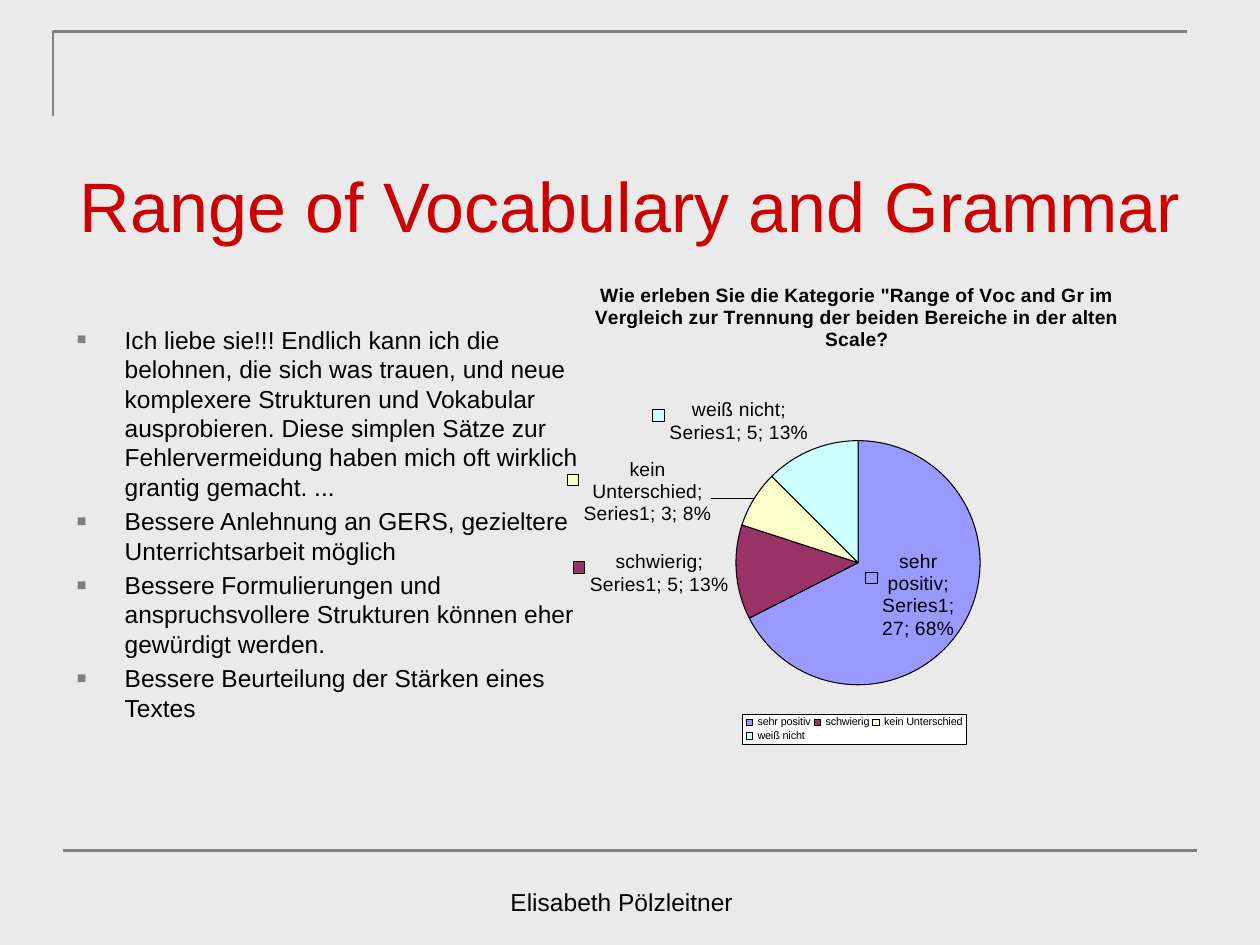
from lxml.etree import SubElement
from pptx import Presentation
from pptx.chart.data import CategoryChartData
from pptx.dml.color import RGBColor
from pptx.enum.chart import XL_CHART_TYPE as ChartType, XL_LABEL_POSITION as LabelPosition
from pptx.enum.chart import XL_LEGEND_POSITION as LegendPosition
from pptx.enum.shapes import MSO_CONNECTOR as Connector
from pptx.enum.text import MSO_ANCHOR as Anchor, MSO_AUTO_SIZE as AutoSize, PP_ALIGN as Align
from pptx.oxml import parse_xml
from pptx.oxml.ns import nsdecls, qn
from pptx.util import Inches, Pt

BLACK = RGBColor(0x00, 0x00, 0x00)
GRAY = RGBColor(0x80, 0x80, 0x80)
RED = RGBColor(0xCC, 0x00, 0x00)
PAPER = RGBColor(0xEA, 0xEA, 0xEA)
SLICES = [
    RGBColor(0x99, 0x99, 0xFF),
    RGBColor(0x99, 0x33, 0x66),
    RGBColor(0xFF, 0xFF, 0xCC),
    RGBColor(0xCC, 0xFF, 0xFF),
]
FONT = "Arial"
WIDTH, HEIGHT = 10, 7.5

QUESTION = (
    'Wie erleben Sie die Kategorie "Range of Voc and Gr im Vergleich '
    "zur Trennung der beiden Bereiche in der alten Scale?"
)
ANSWERS = {"sehr positiv": 27, "schwierig": 5, "kein Unterschied": 3, "weiß nicht": 5}
COMMENTS = [
    "Ich liebe sie!!! Endlich kann ich die belohnen, die sich was trauen, und neue "
    "komplexere Strukturen und Vokabular ausprobieren. Diese simplen Sätze zur "
    "Fehlervermeidung haben mich oft wirklich grantig gemacht. ...",
    "Bessere Anlehnung an GERS, gezieltere Unterrichtsarbeit möglich",
    "Bessere Formulierungen und anspruchsvollere Strukturen können eher gewürdigt werden.",
    "Bessere Beurteilung der Stärken eines Textes",
]


def style_font(font, size, color=BLACK, bold=False):
    font.name, font.size, font.bold = FONT, Pt(size), bold
    font.color.rgb = color


def write(para, text, align=Align.LEFT, **look):
    para.alignment = align
    span = para.add_run()
    span.text = text
    style_font(span.font, **look)


def add_bullet(para):
    props = para._p.get_or_add_pPr()
    props.set("marL", str(Inches(0.38)))
    props.set("indent", str(-Inches(0.38)))
    color = SubElement(props, qn("a:buClr"))
    SubElement(color, qn("a:srgbClr"), val=str(GRAY))
    SubElement(props, qn("a:buSzPct"), val="65000")
    SubElement(props, qn("a:buFont"), typeface=FONT)
    SubElement(props, qn("a:buChar"), char="■")


def place(parent, index, inner=False, **shares):
    for old in parent.findall(qn("c:layout")):
        parent.remove(old)
    layout = parse_xml(f"<c:layout {nsdecls('c')}><c:manualLayout/></c:layout>")
    manual = layout[0]
    if inner:
        SubElement(manual, qn("c:layoutTarget"), val="inner")
    if parent.tag != qn("c:dLbl"):
        for axis in "xy":
            SubElement(manual, qn(f"c:{axis}Mode"), val="edge")
    for key, share in shares.items():
        SubElement(manual, qn(f"c:{key}"), val=str(share))
    parent.insert(index, layout)


class SlideBuilder:
    def __init__(self, deck):
        self.page = deck.slides.add_slide(deck.slide_layouts[1])
        self.shapes = self.page.shapes
        self.width, self.height = deck.slide_width, deck.slide_height
        fill = self.page.background.fill
        fill.solid()
        fill.fore_color.rgb = PAPER

    def spot(self, x, y):
        return int(x * self.width), int(y * self.height)

    def move(self, box, x, y, w, h):
        box.left, box.top = self.spot(x, y)
        box.width, box.height = self.spot(w, h)

    def rule_style(self, line):
        line.color.rgb, line.width = GRAY, Pt(1.5)

    def corner(self, *points):
        first, *others = [self.spot(*point) for point in points]
        builder = self.shapes.build_freeform(*first)
        builder.add_line_segments(others, close=False)
        shape = builder.convert_to_shape()
        shape.shadow.inherit = False
        shape.fill.background()
        self.rule_style(shape.line)

    def rule(self, start, end):
        line = self.shapes.add_connector(Connector.STRAIGHT, *self.spot(*start), *self.spot(*end))
        SubElement(line._element.spPr, qn("a:effectLst"))
        self.rule_style(line.line)

    def frame(self, box, area, anchor):
        self.move(box, *area)
        frame = box.text_frame
        frame.word_wrap, frame.auto_size = True, AutoSize.NONE
        frame.vertical_anchor = anchor
        return frame

    def title(self, text, area):
        frame = self.frame(self.shapes.title, area, Anchor.MIDDLE)
        write(frame.paragraphs[0], text, Align.CENTER, size=40, color=RED)

    def footer(self, text, area):
        frame = self.frame(self.shapes.add_textbox(0, 0, 0, 0), area, Anchor.BOTTOM)
        write(frame.paragraphs[0], text, Align.CENTER, size=14)

    def bullets(self, items, area):
        frame = self.frame(self.page.placeholders[1], area, Anchor.TOP)
        for number, item in enumerate(items):
            para = frame.add_paragraph() if number else frame.paragraphs[0]
            para.space_before = Pt(2.8 if number else 0)
            add_bullet(para)
            write(para, item, size=14)

    def pie(self, heading, answers, area):
        data = CategoryChartData()
        data.categories = list(answers)
        data.add_series("Series1", list(answers.values()))
        corner, size = self.spot(*area[:2]), self.spot(*area[2:])
        chart = self.shapes.add_chart(ChartType.PIE, *corner, *size, data).chart
        style_font(chart.font, 6.8)
        chart.has_title = True
        title = chart.chart_title
        write(title.text_frame.paragraphs[0], heading, Align.CENTER, size=11, bold=True)
        place(title._element, 1, x=0.13, y=0.17)
        plot_area = chart._chartSpace.chart.plotArea
        place(plot_area, 0, inner=True, x=0.33, y=0.39, w=0.34, h=0.33)
        self.slices(chart.plots[0])
        self.legend(chart)

    def slices(self, plot):
        plot.vary_by_categories = True
        series = plot.series[0]
        for number, color in enumerate(SLICES):
            point = series.points[number]
            point.format.fill.solid()
            point.format.fill.fore_color.rgb = color
            point.format.line.color.rgb = BLACK
            point.format.line.width = Pt(0.6)
            label = point.data_label
            style_font(label.font, 11)
            label.position = LabelPosition.OUTSIDE_END if number else LabelPosition.CENTER
        for label in series._element.iter(qn("c:dLbl")):
            SubElement(label, qn("c:separator")).text = "; "
            if label.find(qn("c:idx")).get("val") == "2":
                place(label, 1, x=-0.05, y=0.04)
        shown = ("LegendKey", "Val", "CatName", "SerName", "Percent")
        for flag in series._element.iter(*[qn(f"c:show{name}") for name in shown]):
            flag.set("val", "1")

    def legend(self, chart):
        chart.has_legend = True
        legend = chart.legend
        legend.position = LegendPosition.BOTTOM
        legend.include_in_layout = False
        style_font(legend.font, 6.2)
        place(legend._element, 1, x=0.34, y=0.76, w=0.31, h=0.04)
        look = parse_xml(
            f'<c:spPr {nsdecls("c", "a")}><a:solidFill><a:srgbClr val="FFFFFF"/></a:solidFill>'
            f'<a:ln w="{Pt(0.6)}"><a:solidFill><a:srgbClr val="{BLACK}"/></a:solidFill></a:ln></c:spPr>'
        )
        legend._element.find(qn("c:overlay")).addnext(look)


def main():
    deck = Presentation()
    deck.slide_width, deck.slide_height = Inches(WIDTH), Inches(HEIGHT)
    slide = SlideBuilder(deck)
    slide.corner((0.042, 0.123), (0.042, 0.033), (0.942, 0.033))
    slide.rule((0.05, 0.9), (0.95, 0.9))
    slide.footer("Elisabeth Pölzleitner", (0.335, 0.909, 0.317, 0.067))
    slide.title("Range of Vocabulary and Grammar", (0.051, 0.164, 0.898, 0.105))
    slide.bullets(COMMENTS, (0.051, 0.337, 0.442, 0.556))
    slide.pie(QUESTION, ANSWERS, (0.395, 0.161, 0.572, 0.783))
    deck.save("out.pptx")


if __name__ == "__main__":
    main()
